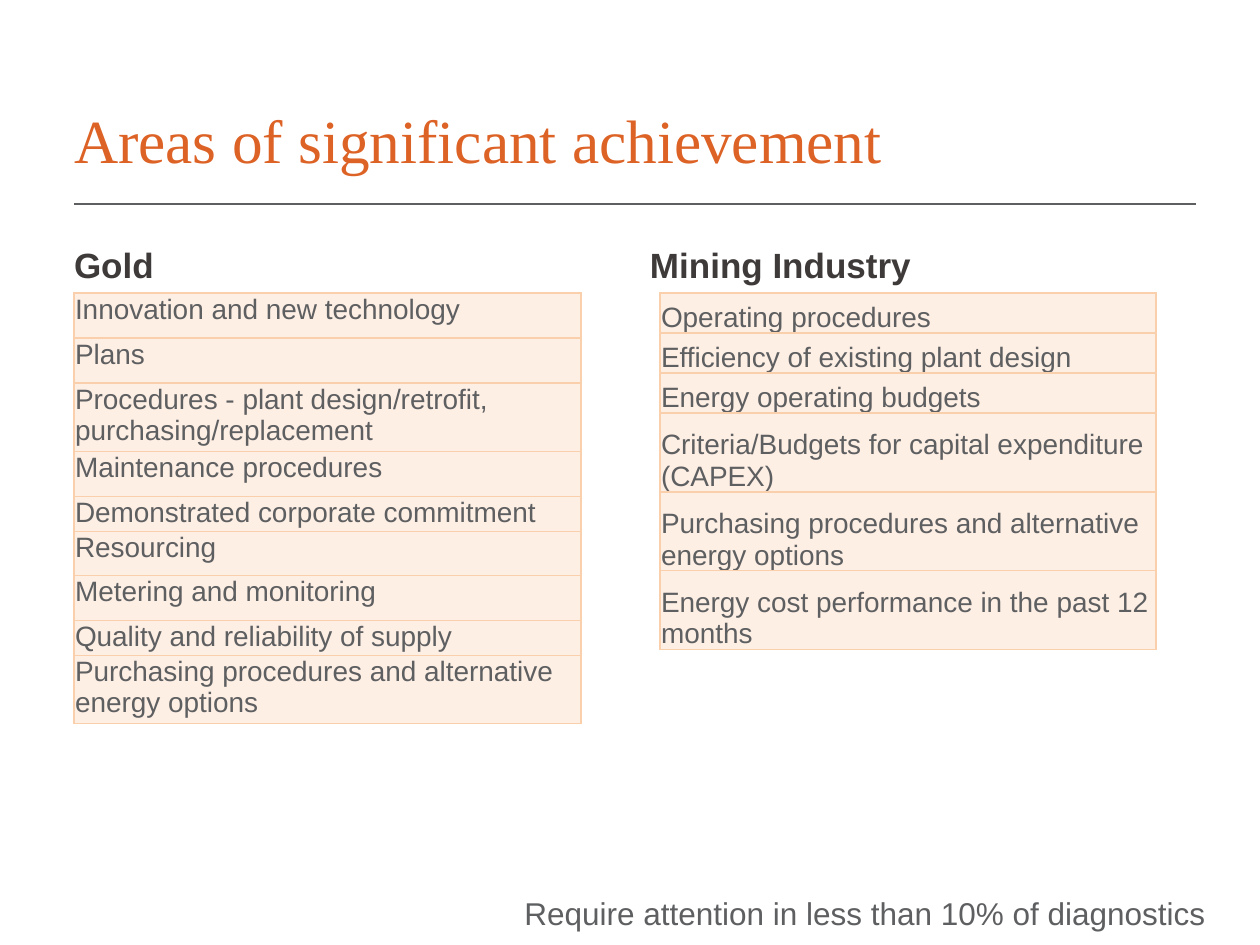
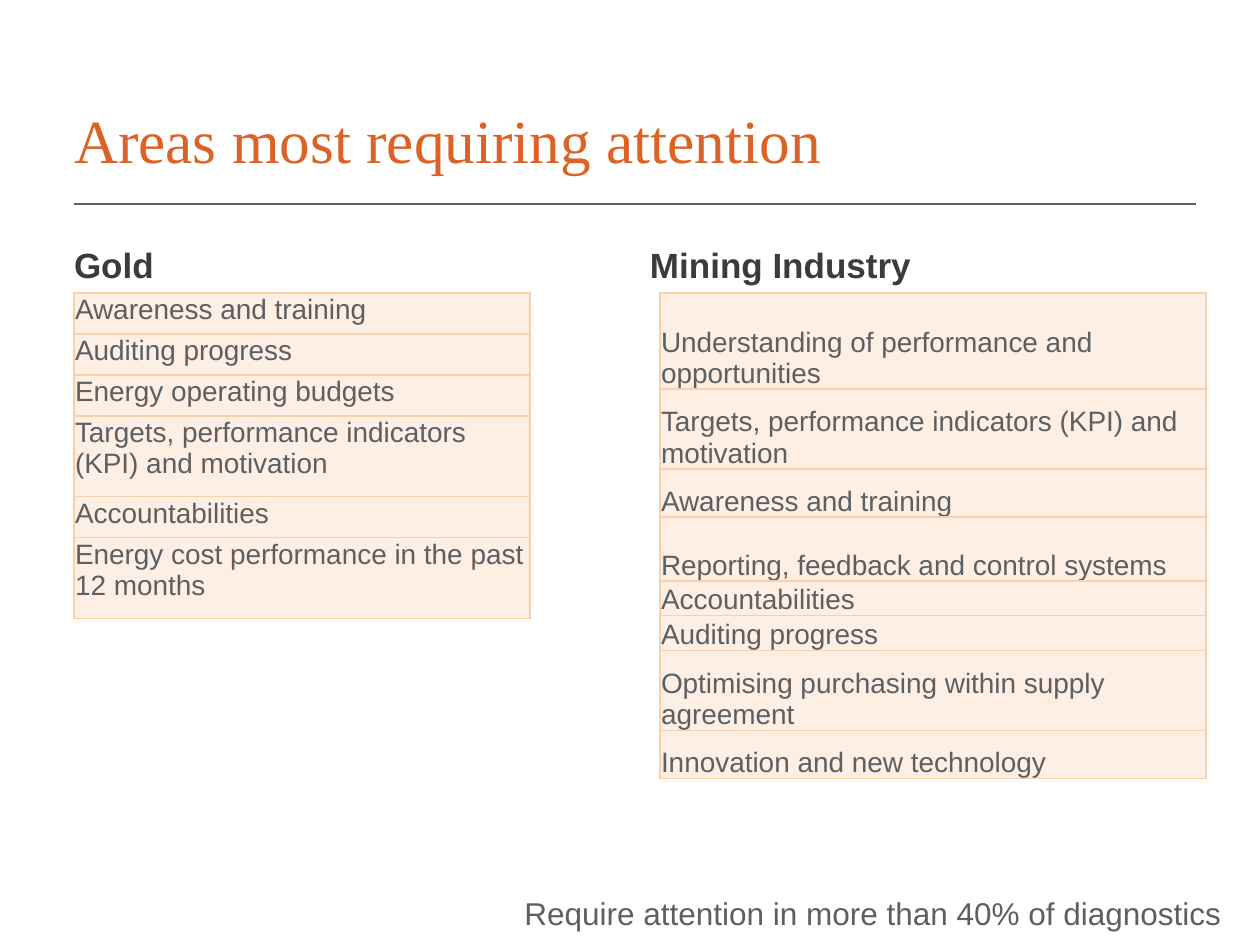
from lxml.etree import SubElement
from pptx import Presentation
from pptx.dml.color import RGBColor
from pptx.enum.shapes import MSO_CONNECTOR as Connector, MSO_SHAPE as Shape
from pptx.enum.text import MSO_ANCHOR as Anchor, MSO_AUTO_SIZE as AutoSize, PP_ALIGN as Align
from pptx.oxml.ns import qn
from pptx.util import Emu, Pt

PX_PER_INCH = 126
GREY, BORDER, CELL_FILL, WHITE = "5E5F61", "F9CFAC", "FEEFE5", "FFFFFF"
TITLE = {"name": "Times New Roman", "size": Pt(35), "color": "DD6225"}
HEADING = {"name": "Arial", "size": Pt(20), "bold": True, "color": "3E3A39"}
CELL = {"name": "Arial", "size": Pt(16), "color": GREY}
FOOTNOTE = {"name": "Arial", "size": Pt(18), "color": GREY}
NO_MARGINS = {f"margin_{side}": 0 for side in ("left", "top", "right", "bottom")}

LEFT, RIGHT_EDGE = 74, 1196
HEADING_LEFTS = {"Gold": LEFT, "Mining Industry": 650}
TABLE_TOP, RIGHT_TABLE_LEFT = 293, 660


def px(length):
    return Emu(round(length * 914400 / PX_PER_INCH))


def rgb(hex_color):
    return RGBColor.from_string(hex_color)


def set_values(target, values):
    """Set each attribute of target named in values."""
    for name, value in values.items():
        setattr(target, name, value)


class SlideBuilder:
    def __init__(self):
        self.presentation = Presentation()
        self.presentation.slide_width = px(1260)
        self.presentation.slide_height = px(945)
        self.slide = None

    def new_slide(self):
        self.slide = self.presentation.slides.add_slide(self.presentation.slide_layouts[6])

    def fill_text(self, frame, text, style, **paragraph_format):
        paragraph = frame.paragraphs[0]
        paragraph.text = text
        set_values(paragraph, {"alignment": Align.LEFT, **paragraph_format})
        set_values(paragraph.font, {key: value for key, value in style.items() if key != "color"})
        paragraph.font.color.rgb = rgb(style["color"])

    def text(self, box, text, style, anchor=Anchor.TOP, **paragraph_format):
        shape = self.slide.shapes.add_textbox(*map(px, box))
        set_values(shape.text_frame, {"word_wrap": True, "vertical_anchor": anchor, **NO_MARGINS})
        self.fill_text(shape.text_frame, text, style, **paragraph_format)

    def rule(self, left, right, top):
        line = self.slide.shapes.add_connector(
            Connector.STRAIGHT, px(left), px(top), px(right), px(top))
        line.line.color.rgb = rgb(GREY)
        line.line.width = Pt(0.75)
        SubElement(line._element.spPr, qn("a:effectLst"))

    def footnote(self, text):
        shape = self.slide.shapes.add_shape(Shape.RECTANGLE, *map(px, (512, 888, 745, 51)))
        shape.shadow.inherit = False
        shape.fill.solid()
        shape.fill.fore_color.rgb = rgb(WHITE)
        shape.line.fill.background()
        set_values(shape.text_frame, {"word_wrap": True, "vertical_anchor": Anchor.TOP,
                                      "auto_size": AutoSize.SHAPE_TO_FIT_TEXT})
        self.fill_text(shape.text_frame, text, FOOTNOTE)

    def cell_borders(self, cell):
        properties = cell._tc.get_or_add_tcPr()
        for side in "LRTB":
            line = SubElement(properties, qn(f"a:ln{side}"), w=str(Pt(0.75)))
            fill = SubElement(line, qn("a:solidFill"))
            SubElement(fill, qn("a:srgbClr"), val=BORDER)

    def table(self, left, width, rows, anchor):
        """Draw a one-column table from (text, row height) pairs."""
        height = sum(row_height for _, row_height in rows)
        table = self.slide.shapes.add_table(
            len(rows), 1, px(left), px(TABLE_TOP), px(width), px(height)).table
        set_values(table, {"first_row": False, "horz_banding": False})
        for row, (text, row_height) in zip(table.rows, rows):
            row.height = px(row_height)
            cell = row.cells[0]
            set_values(cell, {"margin_left": px(1), "margin_top": px(1), "margin_right": px(1),
                              "margin_bottom": 0, "vertical_anchor": anchor})
            self.cell_borders(cell)
            cell.fill.solid()
            cell.fill.fore_color.rgb = rgb(CELL_FILL)
            self.fill_text(cell.text_frame, text, CELL)

    def comparison(self, title, gold_width, gold_rows, industry_width, industry_rows, footnote):
        """Build one slide that sets gold beside the whole mining industry."""
        self.new_slide()
        self.rule(LEFT, RIGHT_EDGE, 204)
        self.text((LEFT, 37, 903, 139), title, TITLE, Anchor.BOTTOM, line_spacing=Pt(32))
        for heading, left in HEADING_LEFTS.items():
            self.text((left, 244, 546, 556), heading, HEADING, space_after=Pt(6))
        self.footnote(footnote)
        self.table(RIGHT_TABLE_LEFT, industry_width, industry_rows, Anchor.BOTTOM)
        self.table(LEFT, gold_width, gold_rows, Anchor.TOP)


def main():
    builder = SlideBuilder()
    builder.comparison(
        "Areas of significant achievement",
        507,
        [("Innovation and new technology", 45),
         ("Plans", 45),
         ("Procedures - plant design/retrofit, purchasing/replacement", 68),
         ("Maintenance procedures", 45),
         ("Demonstrated corporate commitment", 35),
         ("Resourcing", 44),
         ("Metering and monitoring", 45),
         ("Quality and reliability of supply", 35),
         ("Purchasing procedures and alternative energy options", 68)],
        496,
        [("Operating procedures", 40),
         ("Efficiency of existing plant design", 40),
         ("Energy operating budgets", 40),
         ("Criteria/Budgets for capital expenditure (CAPEX)", 79),
         ("Purchasing procedures and alternative energy options", 79),
         ("Energy cost performance in the past 12 months", 79)],
        "Require attention in less than 10% of diagnostics")
    builder.comparison(
        "Areas most requiring attention",
        456,
        [("Awareness and training", 41),
         ("Auditing progress", 41),
         ("Energy operating budgets", 41),
         ("Targets, performance indicators (KPI) and motivation", 81),
         ("Accountabilities", 41),
         ("Energy cost performance in the past 12 months", 81)],
        546,
        [("Understanding of performance and opportunities", 96),
         ("Targets, performance indicators (KPI) and motivation", 80),
         ("Awareness and training", 48),
         ("Reporting, feedback and control systems", 64),
         ("Accountabilities", 34),
         ("Auditing progress", 35),
         ("Optimising purchasing within supply agreement", 80),
         ("Innovation and new technology", 48)],
        "Require attention in more than 40% of diagnostics")
    builder.presentation.save("out.pptx")


if __name__ == "__main__":
    main()
